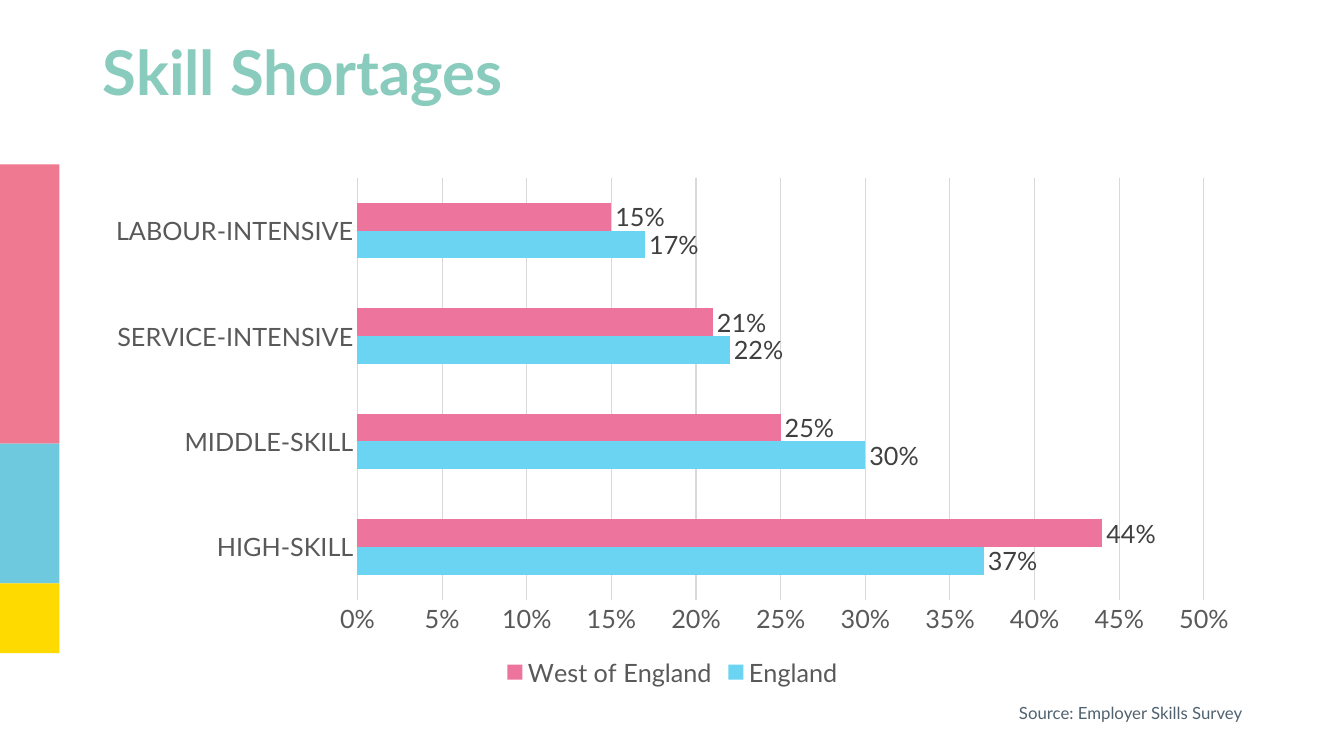
from pptx import Presentation
from pptx.chart.data import CategoryChartData
from pptx.dml.color import RGBColor
from pptx.enum.chart import XL_CHART_TYPE as Chart, XL_LABEL_POSITION as LabelPos
from pptx.enum.chart import XL_LEGEND_POSITION as LegendPos, XL_TICK_MARK as Tick
from pptx.enum.shapes import MSO_SHAPE as Shape
from pptx.enum.text import MSO_ANCHOR as Anchor, MSO_AUTO_SIZE as AutoSize
from pptx.util import Cm, Pt


def rgb(value):
    return RGBColor.from_string(value)


class Deck:
    """Holds the style and the current slide, and draws each kind of element."""

    FONT = "Lato"
    TEXT, LABEL, GRID = "595959", "404040", "D9D9D9"

    def __init__(self):
        self.prs = Presentation()
        self.prs.slide_width, self.prs.slide_height = Cm(33.87), Cm(19.05)
        self.s = self.prs.slides.add_slide(self.prs.slide_layouts[6])

    def style(self, font, size, color, bold=False):
        font.name, font.size, font.bold = self.FONT, Pt(size), bold
        font.color.rgb = rgb(color)

    def rect(self, x, y, w, h, color):
        sp = self.s.shapes.add_shape(Shape.RECTANGLE, Cm(x), Cm(y), Cm(w), Cm(h))
        sp.shadow.inherit = False
        sp.fill.solid()
        sp.fill.fore_color.rgb = rgb(color)
        sp.line.fill.background()

    def text(self, x, y, w, h, text, size, color, bold=False,
             anchor=Anchor.TOP, spacing=1.0, fit=AutoSize.NONE):
        tf = self.s.shapes.add_textbox(Cm(x), Cm(y), Cm(w), Cm(h)).text_frame
        tf.word_wrap, tf.vertical_anchor, tf.auto_size = True, anchor, fit
        p = tf.paragraphs[0]
        p.line_spacing = spacing
        r = p.add_run()
        r.text = text
        self.style(r.font, size, color, bold)

    def line(self, fmt):
        fmt.color.rgb = rgb(self.GRID)
        fmt.width = Pt(0.75)

    def bar_chart(self, x, y, w, h, categories, series, size=18):
        data = CategoryChartData(number_format="0%")
        data.categories = categories
        for name, values, _ in series:
            data.add_series(name, values)
        chart = self.s.shapes.add_chart(
            Chart.BAR_CLUSTERED, Cm(x), Cm(y), Cm(w), Cm(h), data).chart
        self.style(chart.font, size, self.TEXT)
        chart.has_title = False
        chart.has_legend = True
        chart.legend.position = LegendPos.BOTTOM
        chart.legend.include_in_layout = False
        self.style(chart.legend.font, size, self.TEXT)

        cat, val = chart.category_axis, chart.value_axis
        for axis in (cat, val):
            axis.major_tick_mark = axis.minor_tick_mark = Tick.NONE
            self.style(axis.tick_labels.font, size, self.TEXT)
        cat.has_major_gridlines = False
        self.line(cat.format.line)
        val.has_major_gridlines = True
        self.line(val.major_gridlines.format.line)
        val.format.line.fill.background()
        val.minimum_scale, val.maximum_scale, val.major_unit = 0, 0.5, 0.05
        val.tick_labels.number_format = "0%"
        val.tick_labels.number_format_is_linked = False

        plot = chart.plots[0]
        plot.gap_width, plot.overlap, plot.vary_by_categories = 182, 0, False
        for ser, (_, _, color) in zip(plot.series, series):
            ser.format.fill.solid()
            ser.format.fill.fore_color.rgb = rgb(color)
            labels = ser.data_labels
            labels.show_value = True
            labels.position = LabelPos.OUTSIDE_END
            labels.number_format, labels.number_format_is_linked = "0%", False
            self.style(labels.font, size, self.LABEL)


def main():
    deck = Deck()
    unit, top = 1.76, 4.14
    for parts, color in ((4, "EE7990"), (2, "6EC8DE"), (1, "FFDA00")):
        deck.rect(0, top, 1.5, parts * unit, color)
        top += parts * unit
    deck.text(2.34, 0.71, 25.4, 2.39, "Skill Shortages", 44, "89CBBC",
              bold=True, anchor=Anchor.MIDDLE, spacing=0.9)
    deck.bar_chart(
        2.34, 4.22, 29.21, 13.23,
        ["HIGH-SKILL", "MIDDLE-SKILL", "SERVICE-INTENSIVE", "LABOUR-INTENSIVE"],
        [("England", (0.37, 0.3, 0.22, 0.17), "6BD4F2"),
         ("West of England", (0.44, 0.25, 0.21, 0.15), "ED749D")])
    deck.text(25.43, 17.58, 6.32, 0.76, "Source: Employer Skills Survey", 12,
              "50626F", fit=AutoSize.SHAPE_TO_FIT_TEXT)
    deck.prs.save("out.pptx")


if __name__ == "__main__":
    main()
